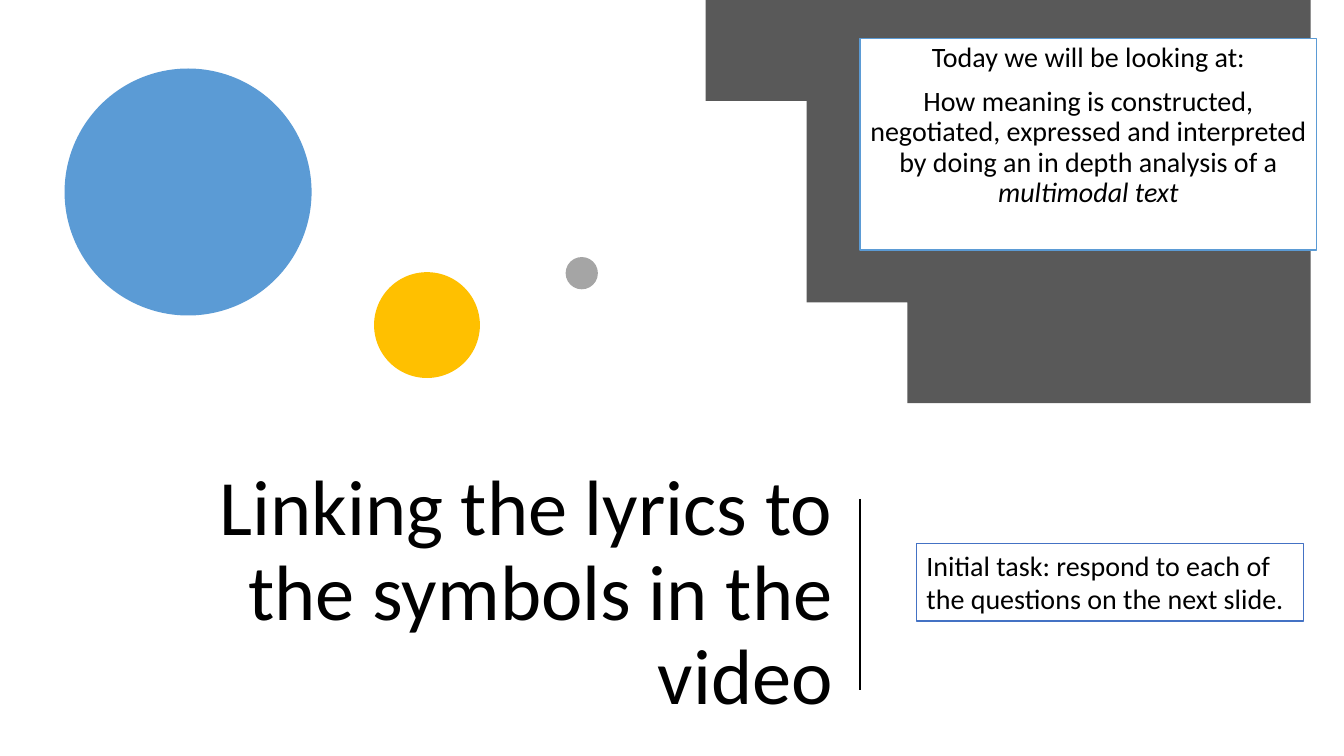
from pptx import Presentation
from pptx import util as u
from pptx.dml.color import RGBColor
from pptx.enum import shapes, text
from lxml import etree

FONT = "Calibri"
INK = "000000"
TITLE = "Linking the lyrics to the symbols in the video"
GOAL = [
    [("Today we will be looking at:", False)],
    [("How meaning is constructed, negotiated, expressed and interpreted "
      "by doing an in depth analysis of a ", False),
     ("multimodal text", True)],
]
TASK = "Initial task: respond to each of the questions on the next slide."
DOTS = [
    (0.64, 0.68, 2.45, "5B9BD5"),
    (3.71, 2.7, 1.05, "FFC000"),
    (5.61, 2.55, 0.32, "A5A5A5"),
]
EDGE = [(7.1, 0), (13.33, 0), (13.33, 4.31), (13.14, 4.35)]
CURVES = [
    [(13.14, 4.35), (12.84, 4.41), (12.52, 4.44), (12.2, 4.44)],
    [(12.2, 4.44), (9.62, 4.44), (7.49, 2.55), (7.11, 0.07)],
]
STEPS = 40

deck = Presentation()
deck.slide_width, deck.slide_height = u.Inches(13.33), u.Inches(7.5)
slide = deck.slides.add_slide(deck.slide_layouts[6])
parts = slide.shapes


def color(code):
    return RGBColor.from_string(code)


def paint(shape, fill, line=None):
    shape.shadow.inherit = False
    shape.fill.solid()
    shape.fill.fore_color.rgb = color(fill)
    if line:
        shape.line.color.rgb = color(line)
        shape.line.width = u.Pt(1)
    else:
        shape.line.fill.background()


def add(kind, left, top, width, height, fill, line=None):
    shape = parts.add_shape(kind, *map(u.Inches, (left, top, width, height)))
    paint(shape, fill, line)
    return shape


def write(shape, paras, size, align, anchor, lead=1.0, gap=0):
    frame = shape.text_frame
    frame.word_wrap = True
    frame.vertical_anchor = anchor
    for n, runs in enumerate(paras):
        para = frame.add_paragraph() if n else frame.paragraphs[0]
        para.alignment = align
        para.line_spacing = lead
        para.space_before = u.Pt(gap if n else 0)
        for words, slant in runs:
            run = para.add_run()
            run.text = words
            run.font.name = FONT
            run.font.size = u.Pt(size)
            run.font.italic = slant
            run.font.color.rgb = color(INK)


def bend(pts, t):
    s = 1 - t
    weights = (s ** 3, 3 * s * s * t, 3 * s * t * t, t ** 3)
    return tuple(sum(w * p[k] for w, p in zip(weights, pts)) for k in (0, 1))


title = parts.add_textbox(*map(u.Inches, (0.92, 4.95, 7.44, 1.9)))
write(title, [[(TITLE, False)]], 56, text.PP_ALIGN.RIGHT,
      text.MSO_ANCHOR.MIDDLE, 0.9)

for left, top, size, fill in DOTS:
    add(shapes.MSO_SHAPE.OVAL, left, top, size, size, fill)

rim = EDGE + [bend(c, n / STEPS) for c in CURVES for n in range(1, STEPS + 1)]
pen = parts.build_freeform(*rim[0], scale=u.Inches(1))
pen.add_line_segments(rim[1:], close=True)
paint(pen.convert_to_shape(), "595959")

rule = parts.add_connector(shapes.MSO_CONNECTOR.STRAIGHT,
                           *map(u.Inches, (8.53, 4.95, 8.53, 6.85)))
rule.line.color.rgb = color(INK)
rule.line.width = u.Pt(1.5)
etree.SubElement(
    rule._element.spPr,
    "{http://schemas.openxmlformats.org/drawingml/2006/main}effectLst")

goal = add(shapes.MSO_SHAPE.RECTANGLE, 8.53, 0.38, 4.53, 2.1,
           "FFFFFF", "5B9BD5")
write(goal, GOAL, 20, text.PP_ALIGN.CENTER, text.MSO_ANCHOR.TOP, 0.9, 10)

task = add(shapes.MSO_SHAPE.RECTANGLE, 9.09, 5.39, 3.84, 0.77,
           "FFFFFF", "4472C4")
write(task, [[(TASK, False)]], 20, text.PP_ALIGN.LEFT, text.MSO_ANCHOR.TOP)

deck.save("out.pptx")
